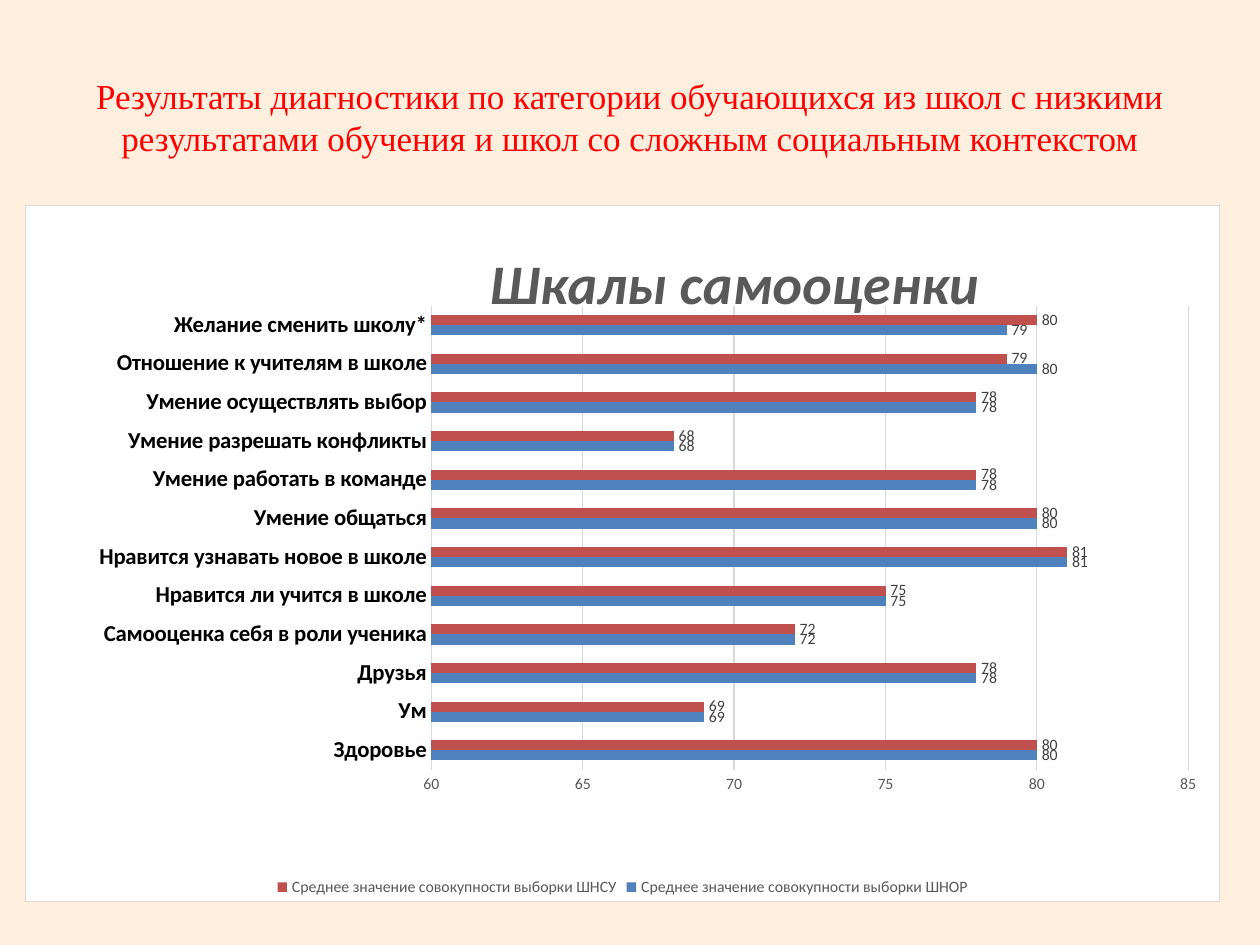
from dataclasses import dataclass
from typing import Any

from lxml import etree
from pptx import Presentation
from pptx.chart.data import CategoryChartData
from pptx.dml.color import RGBColor
from pptx.enum.chart import (XL_CHART_TYPE, XL_LABEL_POSITION, XL_LEGEND_POSITION,
                             XL_TICK_MARK)
from pptx.enum.text import MSO_ANCHOR, PP_ALIGN
from pptx.oxml.ns import qn
from pptx.util import Emu, Pt

BAR = XL_CHART_TYPE.BAR_CLUSTERED
OUTSIDE_END = XL_LABEL_POSITION.OUTSIDE_END
LEGEND_BOTTOM = XL_LEGEND_POSITION.BOTTOM
NO_TICK = XL_TICK_MARK.NONE
MIDDLE = MSO_ANCHOR.MIDDLE
CENTER = PP_ALIGN.CENTER

PAGE_WIDTH, PAGE_HEIGHT = 1260, 945
EMU_PER_PX = 9144000 / PAGE_WIDTH

COLORS = {
    "page": "FFEFDF", "heading": "FF0000", "panel": "FFFFFF", "grid": "D9D9D9",
    "black": "000000", "grey": "595959", "label": "404040",
    "blue": "4F81BD", "red": "C0504D",
}

# Text formats
FORMATS: dict[str, dict[str, Any]] = {
    "heading": {"size": Pt(20), "name": "Times New Roman", "color": "heading"},
    "chart": {"size": Pt(10), "name": "Calibri", "color": "black"},
    "chart title": {"size": Pt(32), "name": "Calibri", "bold": True, "italic": True,
                    "color": "grey"},
    "category": {"size": Pt(13), "name": "Calibri", "bold": True, "color": "black"},
    "small": {"size": Pt(9), "name": "Calibri", "bold": False, "color": "grey"},
    "label": {"size": Pt(9), "name": "Calibri", "bold": False, "color": "label"},
}


@dataclass(frozen=True)
class Sample:
    name: str
    color: str
    values: tuple[int, ...]


HEADING = ("Результаты диагностики по категории обучающихся из школ с низкими "
           "результатами обучения и школ со сложным социальным контекстом")
SCALES = (
    "Здоровье", "Ум", "Друзья", "Самооценка себя в роли ученика",
    "Нравится ли учится в школе", "Нравится узнавать новое в школе",
    "Умение общаться", "Умение работать в команде", "Умение разрешать конфликты",
    "Умение осуществлять выбор", "Отношение к учителям в школе",
    "Желание сменить школу*",
)
SAMPLES = (
    Sample("Среднее значение совокупности выборки ШНОР", "blue",
           (80, 69, 78, 72, 75, 81, 80, 78, 68, 78, 80, 79)),
    Sample("Среднее значение совокупности выборки ШНСУ", "red",
           (80, 69, 78, 72, 75, 81, 80, 78, 68, 78, 79, 80)),
)


def px(*lengths: int) -> list[Emu]:
    return [Emu(round(length * EMU_PER_PX)) for length in lengths]


def rgb(name: str) -> RGBColor:
    return RGBColor.from_string(COLORS[name])


def style(font: Any, format_name: str) -> None:
    for key, value in FORMATS[format_name].items():
        if key == "color":
            font.color.rgb = rgb(value)
        else:
            setattr(font, key, value)


def style_line(line: Any) -> None:
    line.color.rgb = rgb("grid")
    line.width = Pt(0.75)


def set_layout(parent: Any, **places: float) -> None:
    """Place a chart part by fractions of the chart area."""
    layout = parent.find(qn("c:layout"))
    if layout is None:
        layout = etree.Element(qn("c:layout"))
        parent.insert(0, layout)
    manual = etree.SubElement(layout, qn("c:manualLayout"))
    values: dict[str, Any] = {"xMode": "edge", "yMode": "edge", **places}
    if "w" in places:
        values = {"layoutTarget": "inner", **values}
    for tag, value in values.items():
        etree.SubElement(manual, qn(f"c:{tag}")).set("val", str(value))


def fill_chart_area(chart_space: Any) -> None:
    """Give the chart area a solid fill and a thin border."""
    area = etree.Element(qn("c:spPr"))
    border = etree.Element(qn("a:ln"), w=str(Pt(0.75)))
    for parent, color in ((area, "panel"), (border, "grid")):
        fill = etree.SubElement(parent, qn("a:solidFill"))
        etree.SubElement(fill, qn("a:srgbClr"), val=COLORS[color])
    area.append(border)
    chart_space.find(qn("c:chart")).addnext(area)


def add_heading(page: Any) -> None:
    box = page.shapes.add_textbox(*px(63, 38, 1134, 157))
    frame = box.text_frame
    frame.word_wrap = True
    frame.vertical_anchor = MIDDLE
    para = frame.paragraphs[0]
    para.alignment = CENTER
    span = para.add_run()
    span.text = HEADING
    style(span.font, "heading")


def style_axes(chart: Any) -> None:
    categories, values = chart.category_axis, chart.value_axis
    for axis, format_name in ((categories, "category"), (values, "small")):
        axis.major_tick_mark = axis.minor_tick_mark = NO_TICK
        style(axis.tick_labels.font, format_name)
    style_line(categories.format.line)
    values.format.line.fill.background()
    values.has_major_gridlines = True
    style_line(values.major_gridlines.format.line)
    values.minimum_scale, values.maximum_scale, values.major_unit = 60, 85, 5


def style_series(series: Any, sample: Sample) -> None:
    series.format.fill.solid()
    series.format.fill.fore_color.rgb = rgb(sample.color)
    series.invert_if_negative = False
    labels = series.data_labels
    labels.show_value = True
    labels.position = OUTSIDE_END
    style(labels.font, "label")


def add_scales_chart(page: Any) -> None:
    data = CategoryChartData()
    data.categories = SCALES
    for sample in SAMPLES:
        data.add_series(sample.name, sample.values)
    chart = page.shapes.add_chart(BAR, *px(25, 205, 1195, 697), data).chart
    style(chart.font, "chart")
    fill_chart_area(chart.element)

    # Chart title
    chart.has_title = True
    title = chart.chart_title
    para = title.text_frame.paragraphs[0]
    span = para.add_run()
    span.text = "Шкалы самооценки"
    style(span.font, "chart title")
    set_layout(title.element, x=0.38, y=0.04)

    # Plot, axes and bars
    set_layout(chart.element.find(".//" + qn("c:plotArea")),
               x=0.34, y=0.144, w=0.634, h=0.667)
    style_axes(chart)
    plot = chart.plots[0]
    plot.gap_width = 182
    plot.overlap = 0
    plot.vary_by_categories = False
    for series, sample in zip(plot.series, SAMPLES):
        style_series(series, sample)

    # Legend
    chart.has_legend = True
    chart.legend.position = LEGEND_BOTTOM
    chart.legend.include_in_layout = False
    style(chart.legend.font, "small")


def main() -> None:
    deck = Presentation()
    deck.slide_width, deck.slide_height = px(PAGE_WIDTH, PAGE_HEIGHT)
    page = deck.slides.add_slide(deck.slide_layouts[6])
    page.background.fill.solid()
    page.background.fill.fore_color.rgb = rgb("page")
    add_heading(page)
    add_scales_chart(page)
    deck.save("out.pptx")


if __name__ == "__main__":
    main()
